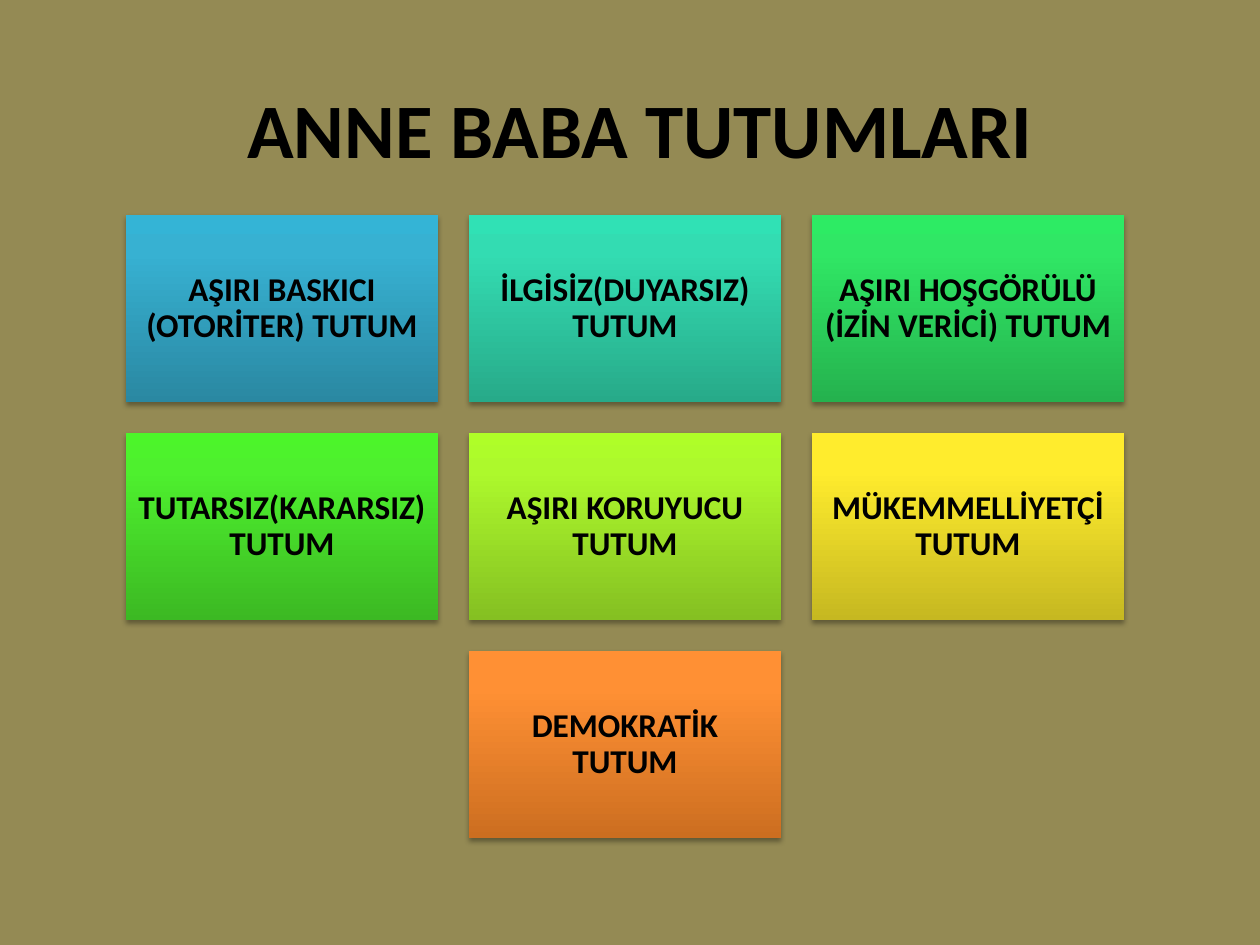
"""Build a slide with seven parental attitudes in a centred grid of tiles."""
from copy import deepcopy

from lxml.etree import SubElement
from pptx import Presentation
from pptx.dml.color import RGBColor
from pptx.enum.shapes import MSO_SHAPE
from pptx.enum.text import MSO_ANCHOR, PP_ALIGN
from pptx.oxml.ns import qn
from pptx.util import Emu, Pt

FONT = "Calibri"
BLACK = RGBColor(0x00, 0x00, 0x00)
OLIVE = RGBColor(0x94, 0x8A, 0x54)
BLUES = RGBColor(0x2A, 0x88, 0xA2), RGBColor(0x37, 0xB1, 0xD2), RGBColor(0x34, 0xB4, 0xD6)
TEALS = RGBColor(0x27, 0xAA, 0x89), RGBColor(0x33, 0xDC, 0xB2), RGBColor(0x30, 0xE1, 0xB5)
EMERALDS = RGBColor(0x25, 0xB2, 0x4E), RGBColor(0x30, 0xE7, 0x65), RGBColor(0x2D, 0xEB, 0x64)
GREENS = RGBColor(0x3C, 0xB9, 0x23), RGBColor(0x4E, 0xF0, 0x2E), RGBColor(0x4C, 0xF5, 0x2A)
LIMES = RGBColor(0x85, 0xC0, 0x22), RGBColor(0xAD, 0xF9, 0x2C), RGBColor(0xAF, 0xFE, 0x28)
YELLOWS = RGBColor(0xC6, 0xB8, 0x21), RGBColor(0xFF, 0xEC, 0x2D), RGBColor(0xFF, 0xED, 0x2E)
ORANGES = RGBColor(0xCC, 0x6E, 0x20), RGBColor(0xFF, 0x90, 0x34), RGBColor(0xFF, 0x91, 0x36)
STOP_POSITIONS = 0, 0.8, 1

TILE_WIDTH, TILE_HEIGHT, GAP = 312, 187, 31
GRID_CENTER, GRID_TOP = 625, 215
ROWS = [
    [
        ("AŞIRI BASKICI (OTORİTER) TUTUM", BLUES),
        ("İLGİSİZ(DUYARSIZ) TUTUM", TEALS),
        ("AŞIRI HOŞGÖRÜLÜ (İZİN VERİCİ) TUTUM", EMERALDS),
    ],
    [
        ("TUTARSIZ(KARARSIZ) TUTUM", GREENS),
        ("AŞIRI KORUYUCU TUTUM", LIMES),
        ("MÜKEMMELLİYETÇİ TUTUM", YELLOWS),
    ],
    [("DEMOKRATİK TUTUM", ORANGES)],
]


def px(count):
    return Emu(round(count * 914400 / 126))


def write(text_frame, text, size):
    text_frame.word_wrap = True
    text_frame.vertical_anchor = MSO_ANCHOR.MIDDLE
    paragraph = text_frame.paragraphs[0]
    paragraph.alignment = PP_ALIGN.CENTER
    run = paragraph.add_run()
    run.text = text
    run.font.name = FONT
    run.font.size = Pt(size)
    run.font.bold = True
    run.font.color.rgb = BLACK
    return paragraph


presentation = Presentation()
presentation.slide_width = px(1260)
presentation.slide_height = px(945)
slide = presentation.slides.add_slide(presentation.slide_layouts[0])
slide.background.fill.solid()
slide.background.fill.fore_color.rgb = OLIVE

subtitle = slide.placeholders[1].element
subtitle.getparent().remove(subtitle)
title = slide.shapes.title
title.left, title.top, title.width, title.height = px(105), px(26), px(1071), px(203)
write(title.text_frame, "ANNE BABA TUTUMLARI", 44)

tiles = slide.shapes.add_group_shape()
for row_number, row in enumerate(ROWS):
    row_width = len(row) * (TILE_WIDTH + GAP) - GAP
    row_left = GRID_CENTER - row_width / 2
    top = GRID_TOP + row_number * (TILE_HEIGHT + GAP)
    for column, (label, colors) in enumerate(row):
        left = row_left + column * (TILE_WIDTH + GAP)
        tile = tiles.shapes.add_shape(
            MSO_SHAPE.RECTANGLE, px(left), px(top), px(TILE_WIDTH), px(TILE_HEIGHT)
        )
        tile.line.fill.background()
        tile.fill.gradient()
        tile.fill.gradient_angle = 90
        properties = tile.element.spPr
        stop_list = properties.find(qn("a:gradFill")).find(qn("a:gsLst"))
        stop_list.append(deepcopy(stop_list[-1]))
        for stop, position, color in zip(tile.fill.gradient_stops, STOP_POSITIONS, colors):
            stop.position = position
            stop.color.rgb = color

        tile.shadow.inherit = False
        shadow = SubElement(
            properties.find(qn("a:effectLst")), qn("a:outerShdw"),
            blurRad=str(Pt(3.1)), dist=str(Pt(1.8)), dir="5400000", rotWithShape="0",
        )
        shadow_color = SubElement(shadow, qn("a:srgbClr"), val=str(BLACK))
        SubElement(shadow_color, qn("a:alpha"), val="35000")

        frame = tile.text_frame
        frame.margin_left = frame.margin_right = px(10)
        frame.margin_top = frame.margin_bottom = px(10)
        paragraph = write(frame, label, 19)
        paragraph.line_spacing = 0.9

presentation.save("out.pptx")
